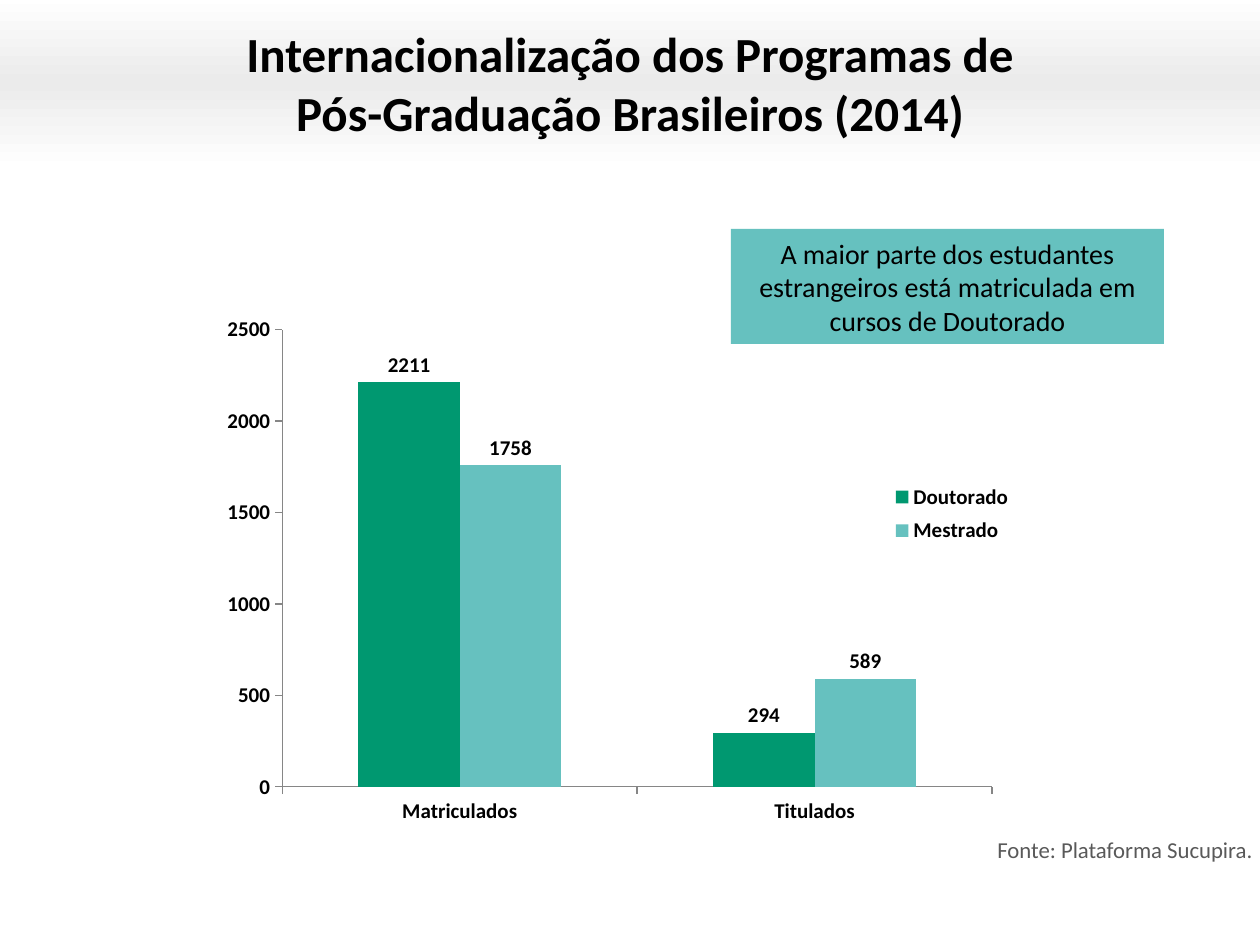
from copy import deepcopy

from lxml.etree import Element, SubElement
from pptx import Presentation
from pptx.chart.data import CategoryChartData
from pptx.dml.color import RGBColor
from pptx.enum.chart import XL_CHART_TYPE as CT, XL_LABEL_POSITION as LP
from pptx.enum.chart import XL_LEGEND_POSITION as LEG, XL_TICK_MARK as TM
from pptx.enum.shapes import MSO_SHAPE as SHAPE
from pptx.enum.text import MSO_ANCHOR as ANCHOR, MSO_AUTO_SIZE as FIT, PP_ALIGN as ALIGN
from pptx.oxml.ns import qn
from pptx.util import Pt

COLORS = {"text": "000000", "source": "595959", "axis": "868686", "band": "EBEBEB",
          "white": "FFFFFF", "green": "009870", "teal": "66C1BF"}
FONT = "Calibri"


def px(n):
    """Convert pixels, 126 to the inch, into EMU."""
    return round(n * 914400 / 126)


def rgb(name):
    """Look up a named colour."""
    return RGBColor.from_string(COLORS[name])


def style(font, size, color="text", bold=False):
    """Set the face, size, colour and weight of a font."""
    font.name, font.size, font.bold = FONT, Pt(size), bold
    font.color.rgb = rgb(color)


def add_box(s, box, color=None):
    """Add a flat rectangle without outline, filled if a colour is given."""
    sp = s.shapes.add_shape(SHAPE.RECTANGLE, *map(px, box))
    sp.shadow.inherit = False
    sp.line.fill.background()
    if color:
        sp.fill.solid()
        sp.fill.fore_color.rgb = rgb(color)
    return sp


def add_header(s, box):
    """Place the title over a band that fades to white at both edges."""
    band = add_box(s, box)
    band.fill.gradient()
    band.fill.gradient_angle = 90
    first = band.fill.gradient_stops[0]
    first.color.rgb = rgb("white")
    stops = band._element.spPr.find(qn("a:gradFill")).find(qn("a:gsLst"))
    stops.insert(1, deepcopy(stops[0]))
    for stop, pos, color in zip(band.fill.gradient_stops, (0, 0.5, 1), ("white", "band", "white")):
        stop.position = pos
        stop.color.rgb = rgb(color)
    title = s.shapes.title
    title.left, title.top, title.width, title.height = map(px, box)
    s.shapes._spTree.append(title._element)
    tf = title.text_frame
    tf.text = "Internacionalização dos Programas de\vPós-Graduação Brasileiros (2014)"
    tf.auto_size, tf.vertical_anchor = FIT.NONE, ANCHOR.MIDDLE
    p = tf.paragraphs[0]
    p.alignment = ALIGN.CENTER
    style(p.font, 28, bold=True)


def add_callout(s, box):
    """Add the highlighted finding."""
    tf = add_box(s, box, "teal").text_frame
    tf.word_wrap = True
    tf.text = "A maior parte dos estudantes estrangeiros está matriculada em cursos de Doutorado"
    p = tf.paragraphs[0]
    p.alignment = ALIGN.CENTER
    style(p.font, 16)


def set_layout(parent, index, x, y, w, h, inner=False):
    """Fix a chart part at fractions of the chart area."""
    for old in parent.findall(qn("c:layout")):
        parent.remove(old)
    layout = Element(qn("c:layout"))
    parent.insert(index, layout)
    manual = SubElement(layout, qn("c:manualLayout"))
    values = [("layoutTarget", "inner")] if inner else []
    values += [("xMode", "edge"), ("yMode", "edge"), ("x", x), ("y", y), ("w", w), ("h", h)]
    for tag, value in values:
        SubElement(manual, qn(f"c:{tag}")).set("val", str(value))


def add_students_chart(s, box):
    """Add the clustered columns of foreign students by degree."""
    data = CategoryChartData(number_format="0")
    data.categories = ["Matriculados", "Titulados"]
    data.add_series("Doutorado", (2211, 294))
    data.add_series("Mestrado", (1758, 589))
    chart = s.shapes.add_chart(CT.COLUMN_CLUSTERED, *map(px, box), data).chart
    chart.has_title = False
    style(chart.font, 12, bold=True)

    plot = chart.plots[0]
    plot.gap_width, plot.overlap, plot.vary_by_categories = 150, 0, False
    for series, color in zip(plot.series, ("green", "teal")):
        series.format.fill.solid()
        series.format.fill.fore_color.rgb = rgb(color)
    plot.has_data_labels = True
    labels = plot.data_labels
    labels.show_value, labels.position = True, LP.OUTSIDE_END
    style(labels.font, 12, bold=True)

    for axis in (chart.category_axis, chart.value_axis):
        axis.has_major_gridlines = False
        axis.major_tick_mark = TM.OUTSIDE
        axis.format.line.color.rgb = rgb("axis")
    value_axis = chart.value_axis
    value_axis.minimum_scale, value_axis.maximum_scale, value_axis.major_unit = 0, 2500, 500

    chart.has_legend = True
    legend = chart.legend
    legend.position, legend.include_in_layout = LEG.RIGHT, False
    set_layout(chart._chartSpace.chart.plotArea, 0, 0.12, 0.22, 0.8, 0.72, inner=True)
    set_layout(legend._element, 1, 0.8, 0.45, 0.15, 0.12)


def add_source(s, box):
    """Add the data source, aligned right."""
    tf = s.shapes.add_textbox(*map(px, box)).text_frame
    tf.word_wrap = True
    tf.margin_right = px(8)
    tf.text = "Fonte: Plataforma Sucupira."
    p = tf.paragraphs[0]
    p.alignment, p.line_spacing, p.space_after = ALIGN.RIGHT, 1.2, Pt(6)
    style(p.font, 13, "source")


def main():
    """Build and save the slide."""
    prs = Presentation()
    prs.slide_width, prs.slide_height = px(1260), px(945)
    s = prs.slides.add_slide(prs.slide_layouts[5])
    add_header(s, (0, -5, 1260, 175))
    add_callout(s, (731, 229, 433, 115))
    add_students_chart(s, (176, 190, 887, 635))
    add_source(s, (174, 824, 1086, 86))
    prs.save("out.pptx")


if __name__ == "__main__":
    main()
